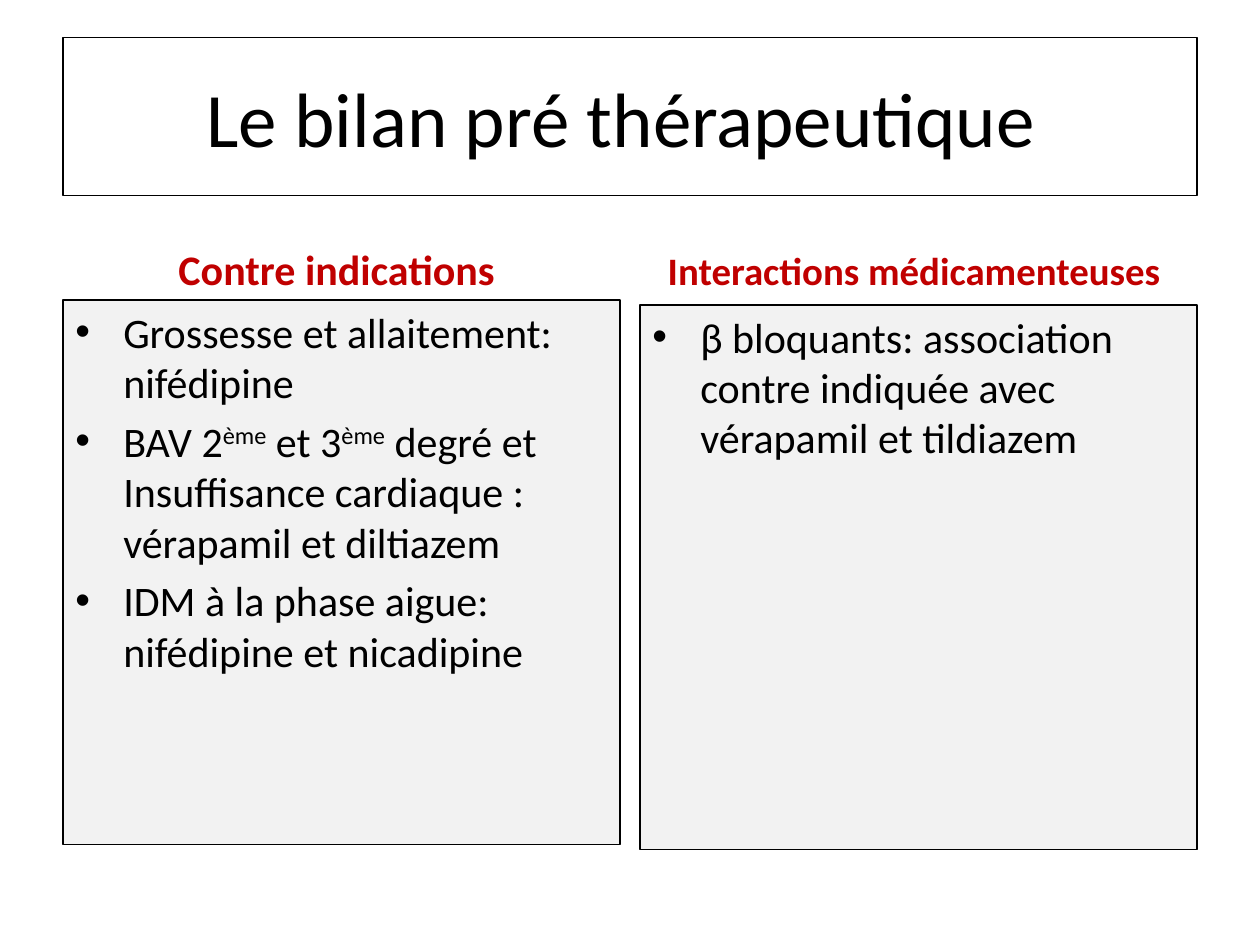
from lxml import etree
from pptx import Presentation
from pptx.dml.color import RGBColor
from pptx.enum.shapes import MSO_SHAPE
from pptx.enum.text import MSO_ANCHOR, PP_ALIGN
from pptx.oxml.ns import qn
from pptx.util import Inches, Pt

RECTANGLE = MSO_SHAPE.RECTANGLE
TOP, MIDDLE, BOTTOM = MSO_ANCHOR.TOP, MSO_ANCHOR.MIDDLE, MSO_ANCHOR.BOTTOM
LEFT, CENTER = PP_ALIGN.LEFT, PP_ALIGN.CENTER
TITLE_ONLY = 5
FONT = "Calibri"
BLACK, RED, GREY = "000000", "C00000", "F2F2F2"
MARGIN, COLUMN_WIDTH, COLUMN_GAP = 0.5, 4.42, 0.16

# Spans at odd positions of a bullet are superscripts.
COLUMNS = [
    {
        "heading": "Contre indications ",
        "heading_size": 24,
        "panel_top": 2.38,
        "bullets": [
            ["Grossesse et allaitement: nifédipine"],
            ["BAV 2", "ème", " et 3", "ème",
             " degré et Insuffisance cardiaque : vérapamil et diltiazem"],
            ["IDM à la phase aigue: nifédipine et nicadipine"],
        ],
    },
    {
        "heading": "Interactions médicamenteuses ",
        "heading_size": 22.2,
        "panel_top": 2.42,
        "bullets": [
            ["β bloquants: association contre indiquée avec vérapamil et tildiazem"],
        ],
    },
]


def color(value):
    return RGBColor.from_string(value)


def outline(shape):
    shape.line.color.rgb = color(BLACK)
    shape.line.width = Pt(0.75)


def format_paragraph(para, size, text_color, align, bold=False):
    para.alignment = align
    para.font.name = FONT
    para.font.size = Pt(size)
    para.font.bold = bold
    para.font.color.rgb = color(text_color)


def add_bullet(para):
    properties = para._p.get_or_add_pPr()
    properties.set("marL", str(Inches(0.38)))
    properties.set("indent", str(-Inches(0.38)))
    mark_font = etree.Element(qn("a:buFont"), typeface="Arial")
    mark = etree.Element(qn("a:buChar"), char="•")
    default_font = properties.find(qn("a:defRPr"))
    default_font.addprevious(mark_font)
    default_font.addprevious(mark)


def place_title(page, left, top, width, height):
    title = page.shapes.title
    title.left, title.top = Inches(left), Inches(top)
    title.width, title.height = Inches(width), Inches(height)
    outline(title)
    title.text_frame.text = "Le bilan pré thérapeutique "
    title.text_frame.vertical_anchor = MIDDLE
    format_paragraph(title.text_frame.paragraphs[0], 44, BLACK, CENTER)


def add_heading(page, text, size, left, top, width, height):
    box = page.shapes.add_textbox(
        Inches(left), Inches(top), Inches(width), Inches(height))
    frame = box.text_frame
    frame.word_wrap = True
    frame.vertical_anchor = BOTTOM
    frame.text = text
    format_paragraph(frame.paragraphs[0], size, RED, CENTER, bold=True)


def add_panel(page, bullets, left, top, width, height):
    """Add a grey outlined panel holding a bulleted list."""
    panel = page.shapes.add_shape(
        RECTANGLE, Inches(left), Inches(top), Inches(width), Inches(height))
    panel.shadow.inherit = False
    panel.fill.solid()
    panel.fill.fore_color.rgb = color(GREY)
    outline(panel)
    frame = panel.text_frame
    frame.word_wrap = True
    frame.vertical_anchor = TOP
    for number, spans in enumerate(bullets):
        para = frame.add_paragraph() if number else frame.paragraphs[0]
        format_paragraph(para, 24, BLACK, LEFT)
        para.space_before = Pt(4.8)
        add_bullet(para)
        for position, text in enumerate(spans):
            span = para.add_run()
            span.text = text
            # Shape text is white by style, so each run states its colour.
            span.font.color.rgb = color(BLACK)
            if position % 2:
                span._r.get_or_add_rPr().set("baseline", "30000")


def add_column(page, column, left, top, width):
    add_heading(page, column["heading"], column["heading_size"],
                left, top, width, 0.7)
    add_panel(page, column["bullets"], left, column["panel_top"], width, 4.32)


def main():
    deck = Presentation()
    deck.slide_width, deck.slide_height = Inches(10), Inches(7.5)
    page = deck.slides.add_slide(deck.slide_layouts[TITLE_ONLY])
    place_title(page, MARGIN, 0.3, 9, 1.25)
    for number, column in enumerate(COLUMNS):
        left = MARGIN + number * (COLUMN_WIDTH + COLUMN_GAP)
        add_column(page, column, left, 1.68, COLUMN_WIDTH)
    deck.save("out.pptx")


if __name__ == "__main__":
    main()
